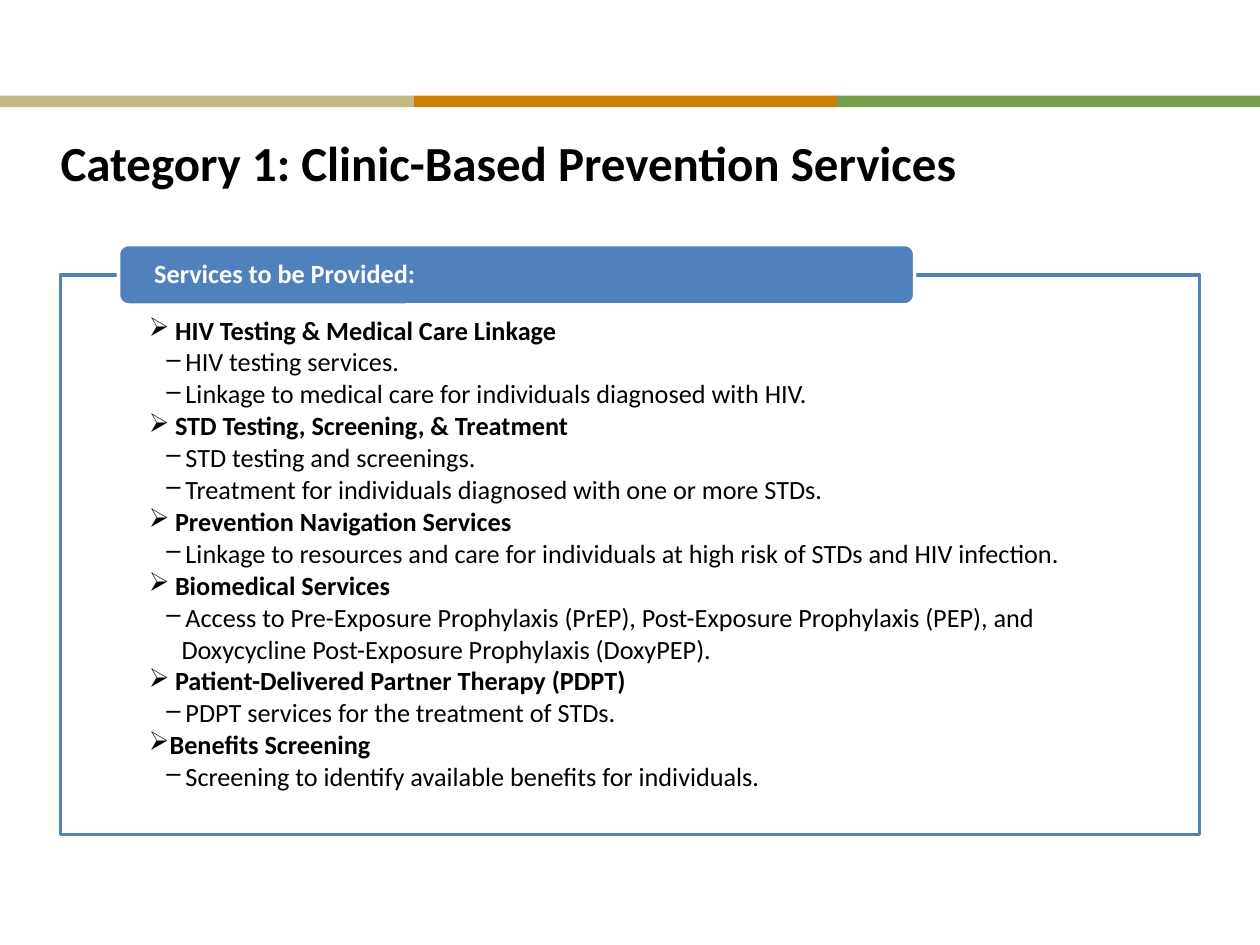
from dataclasses import dataclass

from lxml.etree import SubElement
from pptx import Presentation
from pptx.dml.color import RGBColor
from pptx.enum.shapes import MSO_SHAPE as Preset
from pptx.enum.text import MSO_ANCHOR as Anchor, PP_ALIGN as Align
from pptx.oxml.ns import qn
from pptx.util import Cm, Pt

FONT = "Calibri"
BLACK, WHITE, BLUE = "000000", "FFFFFF", "4F81BD"
SLIDE_WIDTH, SLIDE_HEIGHT = 25.4, 19.05
MARGIN = 1.22
CONTENT_WIDTH = SLIDE_WIDTH - 2 * MARGIN


@dataclass(frozen=True)
class Box:
    left: float
    top: float
    width: float
    height: float


@dataclass(frozen=True)
class Insets:
    left: float = 0
    top: float = 0
    right: float = 0
    bottom: float = 0


@dataclass(frozen=True)
class ListStyle:
    level: int
    indent: float
    hanging: float
    bullet: str = ""
    bold: bool = False


@dataclass(frozen=True)
class Line:
    style: ListStyle
    text: str


@dataclass(frozen=True)
class Band:
    left: float
    right: float
    color: str


HEADING = ListStyle(0, 0.53, 0.53, "➢", True)
TIGHT_HEADING = ListStyle(0, 0.41, 0.41, "➢", True)
ITEM = ListStyle(1, 0.74, 0.41, "‒")
CONTINUATION = ListStyle(0, 0.66, 0)

BANDS = [
    Band(0, 8.35, "C5B783"),
    Band(8.35, 16.87, "CF7F00"),
    Band(16.87, SLIDE_WIDTH, "789D4A"),
]

SERVICES = [
    Line(HEADING, "HIV Testing & Medical Care Linkage"),
    Line(ITEM, "HIV testing services."),
    Line(ITEM, "Linkage to medical care for individuals diagnosed with HIV."),
    Line(HEADING, "STD Testing, Screening, & Treatment"),
    Line(ITEM, "STD testing and screenings."),
    Line(ITEM, "Treatment for individuals diagnosed with one or more STDs."),
    Line(HEADING, "Prevention Navigation Services"),
    Line(ITEM, "Linkage to resources and care for individuals at high risk of STDs and HIV infection."),
    Line(HEADING, "Biomedical Services"),
    Line(ITEM, "Access to Pre-Exposure Prophylaxis (PrEP), Post-Exposure Prophylaxis (PEP), and"),
    Line(CONTINUATION, "Doxycycline Post-Exposure Prophylaxis (DoxyPEP)."),
    Line(HEADING, "Patient-Delivered Partner Therapy (PDPT)"),
    Line(ITEM, "PDPT services for the treatment of STDs."),
    Line(TIGHT_HEADING, "Benefits Screening"),
    Line(ITEM, "Screening to identify available benefits for individuals."),
]


def rgb(color: str) -> RGBColor:
    return RGBColor.from_string(color)


def place(shape, box: Box) -> None:
    shape.left, shape.top = Cm(box.left), Cm(box.top)
    shape.width, shape.height = Cm(box.width), Cm(box.height)


def add_panel(slide, preset, box: Box, fill: str, line: str = ""):
    shape = slide.shapes.add_shape(
        preset, Cm(box.left), Cm(box.top), Cm(box.width), Cm(box.height)
    )
    shape.shadow.inherit = False
    shape.fill.solid()
    shape.fill.fore_color.rgb = rgb(fill)
    if line:
        shape.line.color.rgb = rgb(line)
        shape.line.width = Pt(2)
    else:
        shape.line.fill.background()
    return shape


def set_frame(frame, insets: Insets, anchor) -> None:
    frame.word_wrap = True
    frame.vertical_anchor = anchor
    frame.margin_left, frame.margin_right = Cm(insets.left), Cm(insets.right)
    frame.margin_top, frame.margin_bottom = Cm(insets.top), Cm(insets.bottom)


def format_text(paragraph, size: float, color: str, bold: bool) -> None:
    paragraph.alignment = Align.LEFT
    for run in paragraph.runs:
        run.font.name = FONT
        run.font.size = Pt(size)
        run.font.bold = bold
        run.font.color.rgb = rgb(color)


def set_list_style(paragraph, style: ListStyle) -> None:
    properties = paragraph._p.get_or_add_pPr()
    properties.set("marL", str(Cm(style.indent)))
    properties.set("indent", str(-Cm(style.hanging)))
    if style.bullet:
        SubElement(properties, qn("a:buChar")).set("char", style.bullet)
    else:
        SubElement(properties, qn("a:buNone"))
    paragraph.level = style.level
    paragraph.line_spacing = 0.9
    paragraph.space_after = Pt(2)


def add_title(slide, text: str) -> None:
    title = slide.shapes.title
    place(title, Box(MARGIN, 2.21, CONTENT_WIDTH, 2.11))
    title.text_frame.text = text
    set_frame(title.text_frame, Insets(), Anchor.MIDDLE)
    format_text(title.text_frame.paragraphs[0], 28, BLACK, True)


def add_services(slide, lines: list[Line]) -> None:
    panel = add_panel(
        slide, Preset.RECTANGLE, Box(MARGIN, 5.54, CONTENT_WIDTH, 11.28), WHITE, BLUE
    )
    frame = panel.text_frame
    set_frame(frame, Insets(1.78, 0.86, 1.78, 0.3), Anchor.TOP)
    frame.text = "\n".join(line.text for line in lines)
    for paragraph, line in zip(frame.paragraphs, lines):
        set_list_style(paragraph, line.style)
        format_text(paragraph, 15, BLACK, line.style.bold)


def add_services_label(slide, text: str) -> None:
    label = add_panel(
        slide, Preset.ROUNDED_RECTANGLE, Box(2.39, 4.93, 16.05, 1.22), BLUE, WHITE
    )
    set_frame(label.text_frame, Insets(left=0.66, right=0.66), Anchor.MIDDLE)
    label.text_frame.text = text
    paragraph = label.text_frame.paragraphs[0]
    paragraph.line_spacing = 0.9
    format_text(paragraph, 15, WHITE, True)


def main() -> None:
    presentation = Presentation()
    presentation.slide_width = Cm(SLIDE_WIDTH)
    presentation.slide_height = Cm(SLIDE_HEIGHT)
    slide = presentation.slides.add_slide(presentation.slide_layouts[5])
    for band in BANDS:
        box = Box(band.left, 1.93, band.right - band.left, 0.23)
        add_panel(slide, Preset.RECTANGLE, box, band.color)
    add_title(slide, "Category 1: Clinic-Based Prevention Services")
    add_services(slide, SERVICES)
    add_services_label(slide, "Services to be Provided:")
    presentation.save("out.pptx")


if __name__ == "__main__":
    main()
